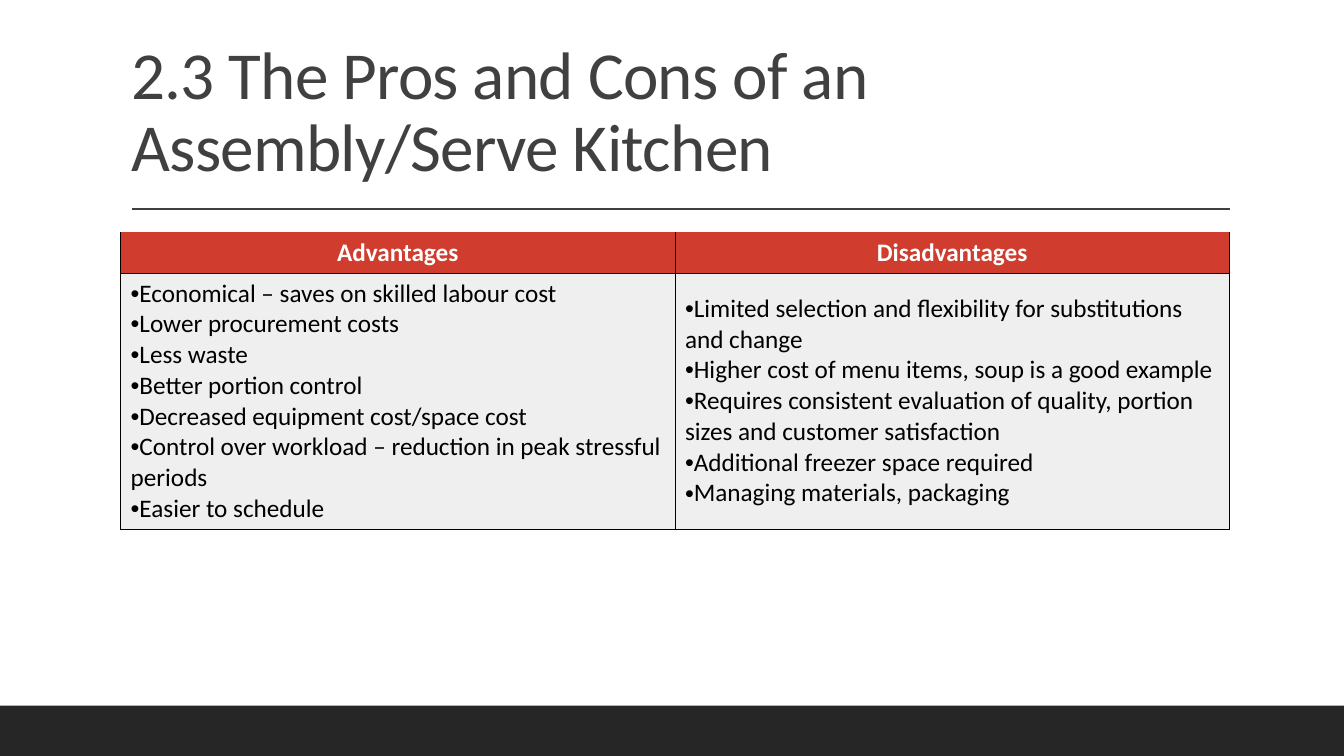
"""Build a slide that weighs the pros and cons of an assembly/serve kitchen."""
import pptx
import pptx.dml.color
import pptx.enum.shapes
import pptx.enum.text
import pptx.oxml
import pptx.oxml.ns
import pptx.util
from pptx.util import Cm

COLORS = {
    "band": "262626", "title": "404040", "head": "D03C2D",
    "body": "EFEFEF", "white": "FFFFFF", "black": "000000",
}
PROS = [
    "Economical – saves on skilled labour cost",
    "Lower procurement costs",
    "Less waste",
    "Better portion control",
    "Decreased equipment cost/space cost",
    "Control over workload – reduction in peak stressful periods",
    "Easier to schedule",
]
CONS = [
    "Limited selection and flexibility for substitutions and change",
    "Higher cost of menu items, soup is a good example",
    "Requires consistent evaluation of quality, portion sizes and customer satisfaction",
    "Additional freezer space required",
    "Managing materials, packaging",
]
NS = pptx.oxml.ns.nsdecls("a")
ALIGN = pptx.enum.text.PP_ALIGN
ANCHOR = pptx.enum.text.MSO_ANCHOR


def color(name):
    return pptx.dml.color.RGBColor.from_string(COLORS[name])


class Deck:
    """Hold the text style and the current slide."""

    def __init__(self, font, size):
        self.font, self.size = font, size
        self.file = pptx.Presentation()
        self.file.slide_width, self.file.slide_height = Cm(33.87), Cm(19.05)
        self.slide = self.file.slides.add_slide(self.file.slide_layouts[6])

    def style(self, par, tint, size=None, bold=False):
        for run in par.runs:
            run.font.name = self.font
            run.font.size = pptx.util.Pt(size or self.size)
            run.font.bold = bold
            run.font.color.rgb = color(tint)

    def band(self, left, top, width, height):
        kind = pptx.enum.shapes.MSO_SHAPE.RECTANGLE
        shape = self.slide.shapes.add_shape(kind, left, top, width, height)
        shape.shadow.inherit = False
        shape.fill.solid()
        shape.fill.fore_color.rgb = color("band")
        shape.line.fill.background()

    def rule(self, left, right, top):
        kind = pptx.enum.shapes.MSO_CONNECTOR.STRAIGHT
        line = self.slide.shapes.add_connector(kind, left, top, right, top)
        line.line.color.rgb = color("title")
        line.line.width = pptx.util.Pt(1)
        line._element.spPr.append(pptx.oxml.parse_xml(f"<a:effectLst {NS}/>"))

    def title(self, text, left, top, width, height):
        frame = self.slide.shapes.add_textbox(left, top, width, height).text_frame
        frame.word_wrap = True
        frame.vertical_anchor = ANCHOR.BOTTOM
        frame.text = text
        par = frame.paragraphs[0]
        par.line_spacing = 0.9
        self.style(par, "title", 48)
        par.runs[0].font._element.set("spc", "-50")

    def cell(self, cell, lines, head):
        cell.vertical_anchor = ANCHOR.MIDDLE
        cell.fill.solid()
        cell.fill.fore_color.rgb = color("head" if head else "body")
        self.border(cell, head)
        cell.text_frame.text = "\n".join(lines)
        for par in cell.text_frame.paragraphs:
            if head:
                par.alignment = ALIGN.CENTER
            else:
                self.bullet(par)
            self.style(par, "white" if head else "black", bold=head)

    def bullet(self, par):
        props = par._p.get_or_add_pPr()
        props.set("marL", "0")
        props.set("indent", "0")
        for mark in ('buFont {} typeface="Arial"', 'buChar {} char="•"'):
            props.append(pptx.oxml.parse_xml(f"<a:{mark.format(NS)}/>"))

    def border(self, cell, head):
        ink = f'<a:solidFill><a:srgbClr val="{COLORS["black"]}"/></a:solidFill>'
        for spot, side in enumerate("LRTB"):
            fill = "<a:noFill/>" if head and side == "T" else ink
            edge = f'<a:ln{side} {NS} w="{pptx.util.Pt(0.75)}">{fill}</a:ln{side}>'
            cell._tc.get_or_add_tcPr().insert(spot, pptx.oxml.parse_xml(edge))

    def table(self, rows, left, top, width, highs):
        grid = self.slide.shapes.add_table(
            len(rows), len(rows[0]), left, top, width, sum(highs)).table
        grid.horz_banding = False
        for r, row in enumerate(rows):
            grid.rows[r].height = highs[r]
            for c, lines in enumerate(row):
                self.cell(grid.cell(r, c), lines, r == 0)


def main():
    deck = Deck("Calibri", 18)
    deck.band(0, Cm(17.78), Cm(33.87), Cm(1.27))
    deck.rule(Cm(3.33), Cm(31), Cm(5.27))
    deck.title("2.3 The Pros and Cons of an Assembly/Serve Kitchen",
               Cm(3.06), Cm(0.78), Cm(27.94), Cm(4.04))
    deck.table([[["Advantages"], ["Disadvantages"]], [PROS, CONS]],
               Cm(3.04), Cm(5.85), Cm(27.94), [Cm(1.03), Cm(6.45)])
    deck.file.save("out.pptx")


if __name__ == "__main__":
    main()
